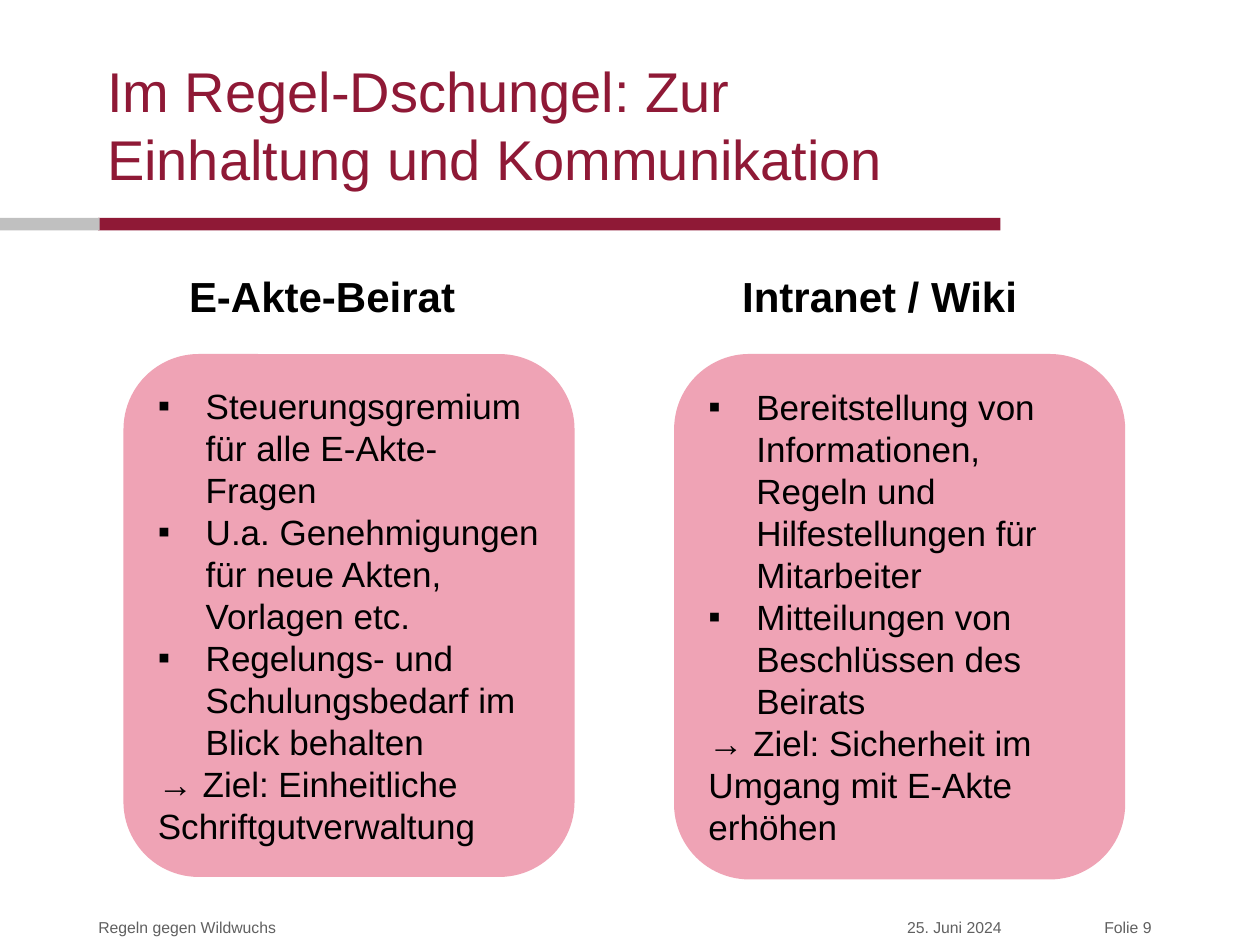
from lxml import etree
from pptx import Presentation
from pptx import util as u
from pptx.dml.color import RGBColor
from pptx.enum import shapes, text
from pptx.oxml.ns import qn

CRIMSON = RGBColor(0x8F, 0x19, 0x36)
SILVER = RGBColor(0xC0, 0xC0, 0xC0)
PINK = RGBColor(0xEF, 0xA3, 0xB5)
GREY = RGBColor(0x60, 0x60, 0x60)
BLACK = RGBColor(0, 0, 0)
FONT = "Arial"

TITLE = "Im Regel-Dschungel: Zur Einhaltung und Kommunikation"
COLUMNS = [
    {
        "heading": "E-Akte-Beirat",
        "bullets": [
            "Steuerungsgremium für alle E-Akte-Fragen",
            "U.a. Genehmigungen für neue Akten, Vorlagen etc.",
            "Regelungs- und Schulungsbedarf im Blick behalten",
        ],
        "goal": "→ Ziel: Einheitliche Schriftgutverwaltung",
        "heading_offset": 0.42,
        "card_height": 4.15,
    },
    {
        "heading": "Intranet / Wiki",
        "bullets": [
            "Bereitstellung von Informationen, Regeln und Hilfestellungen für Mitarbeiter",
            "Mitteilungen von Beschlüssen des Beirats",
        ],
        "goal": "→ Ziel: Sicherheit im Umgang mit E-Akte erhöhen",
        "heading_offset": 0.44,
        "card_height": 4.17,
    },
]
LEFT, RIGHT = text.PP_ALIGN.LEFT, text.PP_ALIGN.RIGHT
# text, left, width, alignment, right inset
FOOTERS = [
    ("Regeln gegen Wildwuchs", 0.78, 5.51, LEFT, 0),
    ("25. Juni 2024", 6.57, 1.38, RIGHT, 0),
    ("Folie 9", 7.94, 1.27, RIGHT, 0.07),
]
RULES = [(0.78, 7.16, CRIMSON), (0, 0.79, SILVER)]  # left, width, colour

COLUMN_LEFT, COLUMN_STEP, CARD_WIDTH, CARD_TOP = 0.98, 4.37, 3.58, 2.81
HEADING_TOP, HEADING_WIDTH, HEADING_HEIGHT = 2.1, 2.75, 0.56
RULE_TOP, RULE_HEIGHT = 1.73, 0.1
FOOTER_TOP, FOOTER_HEIGHT = 7.22, 0.28
HANGING = 0.38


def place(shape, left, top, width, height):
    shape.left, shape.top = u.Inches(left), u.Inches(top)
    shape.width, shape.height = u.Inches(width), u.Inches(height)


def set_bullet(paragraph, mark):
    """Give the paragraph a hanging bullet, or none when mark is empty."""
    properties = paragraph._p.get_or_add_pPr()
    indent = u.Inches(HANGING) if mark else 0
    properties.set("marL", str(indent))
    properties.set("indent", str(-indent))
    if mark:
        etree.SubElement(properties, qn("a:buFont"), typeface=FONT)
        etree.SubElement(properties, qn("a:buChar"), char=mark)
    else:
        etree.SubElement(properties, qn("a:buNone"))


def write(shape, lines, size, color=BLACK, bold=False, align=LEFT,
          anchor=text.MSO_ANCHOR.MIDDLE, marks=()):
    """Fill the shape with one paragraph a line; marks holds the leading bullets."""
    frame = shape.text_frame
    frame.word_wrap = True
    frame.auto_size = text.MSO_AUTO_SIZE.NONE
    frame.vertical_anchor = anchor
    for index, line in enumerate(lines):
        paragraph = frame.paragraphs[0] if index == 0 else frame.add_paragraph()
        paragraph.alignment = align
        paragraph.space_before = u.Pt(0)
        set_bullet(paragraph, marks[index] if index < len(marks) else "")
        run = paragraph.add_run()
        run.text = line
        run.font.name, run.font.size = FONT, u.Pt(size)
        run.font.bold, run.font.color.rgb = bold, color


def add_filled(slide, preset, color, *box):
    shape = slide.shapes.add_shape(preset, *map(u.Inches, box))
    shape.shadow.inherit = False
    shape.fill.solid()
    shape.fill.fore_color.rgb = color
    shape.line.fill.background()
    return shape


def add_footer(slide, line, left, width, align, inset):
    box = slide.shapes.add_textbox(
        *map(u.Inches, (left, FOOTER_TOP, width, FOOTER_HEIGHT)))
    frame = box.text_frame
    frame.margin_left = frame.margin_top = frame.margin_bottom = 0
    frame.margin_right = u.Inches(inset)
    write(box, [line], 9, color=GREY, align=align)


def add_column(slide, heading, column, left):
    place(heading, left + column["heading_offset"], HEADING_TOP,
          HEADING_WIDTH, HEADING_HEIGHT)
    write(heading, [column["heading"]], 24, bold=True, anchor=text.MSO_ANCHOR.TOP)
    card = add_filled(slide, shapes.MSO_SHAPE.ROUNDED_RECTANGLE, PINK,
                      left, CARD_TOP, CARD_WIDTH, column["card_height"])
    bullets = column["bullets"]
    write(card, bullets + [column["goal"]], 20, marks="▪" * len(bullets))


def main():
    presentation = Presentation()
    presentation.slide_width, presentation.slide_height = u.Inches(10), u.Inches(7.5)
    slide = presentation.slides.add_slide(
        presentation.slide_layouts.get_by_name("Two Content"))
    title, *headings = slide.placeholders

    for left, width, color in RULES:
        add_filled(slide, shapes.MSO_SHAPE.RECTANGLE, color,
                   left, RULE_TOP, width, RULE_HEIGHT)
    for footer in FOOTERS:
        add_footer(slide, *footer)

    place(title, 0.75, 0.48, 6.38, 1.01)
    write(title, [TITLE], 32, color=CRIMSON)
    for index, (heading, column) in enumerate(zip(headings, COLUMNS)):
        add_column(slide, heading, column, COLUMN_LEFT + index * COLUMN_STEP)

    presentation.save("out.pptx")


if __name__ == "__main__":
    main()
